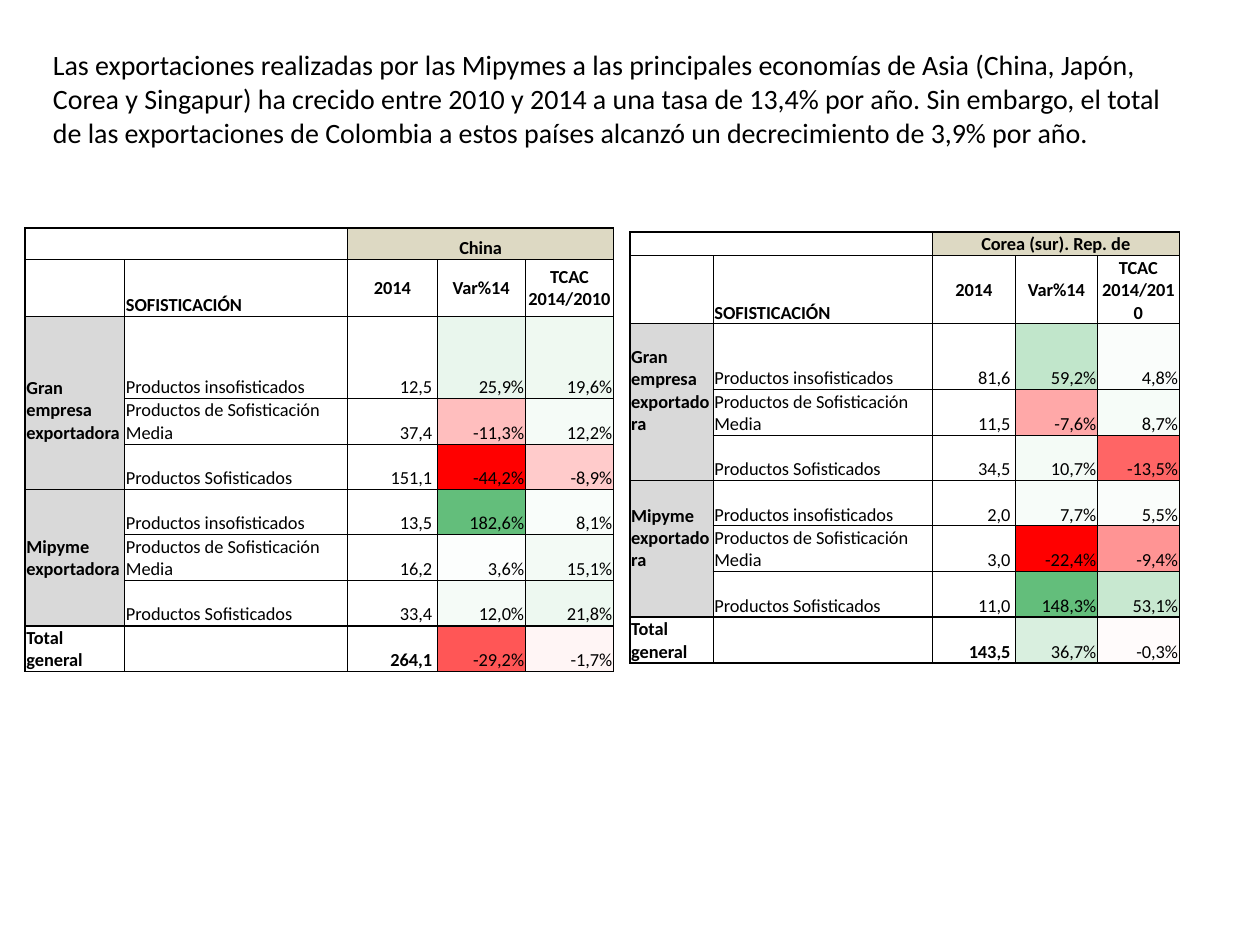
import lxml.etree
import pptx
import pptx.dml.color
import pptx.enum.text
import pptx.oxml.ns
import pptx.util

Inches, Pt = pptx.util.Inches, pptx.util.Pt
ALIGN, ANCHOR = pptx.enum.text.PP_ALIGN, pptx.enum.text.MSO_ANCHOR
qn = pptx.oxml.ns.qn

THEME = {
    "font": "Calibri", "ink": "000000", "title_size": 16, "table_size": 10.5,
    "country_fill": "DDD9C3", "group_fill": "D9D9D9", "thin": 0.5, "thick": 1,
}
CELL_MARGINS = {"margin_left": 0.01, "margin_top": 0.01, "margin_right": 0.01, "margin_bottom": 0}
PRODUCTS = ["Productos insofisticados", "Productos de Sofisticación Media", "Productos Sofisticados"]
HEADINGS = ["", "SOFISTICACIÓN", "2014", "Var%14", "TCAC 2014/2010"]
GROUPS = {2: "Gran empresa exportadora", 5: "Mipyme exportadora"}
TOTAL_ROW = 8

# Each line of values: 2014, Var%14 and its fill, TCAC and its fill
COUNTRIES = [
    {
        "name": "China", "left": 0.2, "top": 1.81,
        "widths": [0.79, 1.77, 0.71, 0.7, 0.7],
        "heights": [0.25, 0.45, 0.65] + [0.36] * 6,
        "values": [
            ("12,5", "25,9%", "E9F6ED", "19,6%", "EFF9F1"),
            ("37,4", "-11,3%", "FFBEBE", "12,2%", "F5FBF7"),
            ("151,1", "-44,2%", "FF0000", "-8,9%", "FFCBCB"),
            ("13,5", "182,6%", "63BE7B", "8,1%", "F9FDFA"),
            ("16,2", "3,6%", "FCFEFD", "15,1%", "F3FAF5"),
            ("33,4", "12,0%", "F5FBF7", "21,8%", "EDF8F0"),
            ("264,1", "-29,2%", "FF5656", "-1,7%", "FFF5F5"),
        ],
    },
    {
        "name": "Corea (sur). Rep. de", "left": 5, "top": 1.84,
        "widths": [0.66, 1.74, 0.66, 0.65, 0.65],
        "heights": [0.19, 0.53, 0.52] + [0.36] * 6,
        "values": [
            ("81,6", "59,2%", "C1E6CB", "4,8%", "FAFDFB"),
            ("11,5", "-7,6%", "FFA8A8", "8,7%", "F6FCF8"),
            ("34,5", "10,7%", "F4FBF6", "-13,5%", "FF6565"),
            ("2,0", "7,7%", "F7FCF9", "5,5%", "FAFDFB"),
            ("3,0", "-22,4%", "FF0000", "-9,4%", "FF9494"),
            ("11,0", "148,3%", "63BE7B", "53,1%", "C8E8D0"),
            ("143,5", "36,7%", "D9EFDF", "-0,3%", "FFFBFB"),
        ],
    },
]


def write(paragraph, text, size, bold=False, align=ALIGN.LEFT):
    paragraph.alignment = align
    if not text:
        lxml.etree.SubElement(paragraph._p, qn("a:endParaRPr"), sz=str(int(size * 100)))
        return
    run = paragraph.add_run()
    run.text = text
    font_format = {"name": THEME["font"], "size": Pt(size), "bold": bold}
    for attribute, value in font_format.items():
        setattr(run.font, attribute, value)
    run.font.color.rgb = pptx.dml.color.RGBColor.from_string(THEME["ink"])


def draw_borders(cell, row, column):
    """Thick lines frame the table, the figures and the total row; the rest are thin."""
    last_row = row + cell.span_height - 1 if cell.is_merge_origin else row
    last_column = column + cell.span_width - 1 if cell.is_merge_origin else column
    thick_sides = {
        "a:lnL": column in (0, 2),
        "a:lnR": last_column in (1, 4),
        "a:lnT": row in (0, TOTAL_ROW),
        "a:lnB": last_row in (TOTAL_ROW - 1, TOTAL_ROW),
    }
    properties = cell._tc.get_or_add_tcPr()
    for side, is_thick in thick_sides.items():
        width = Pt(THEME["thick"] if is_thick else THEME["thin"])
        line = lxml.etree.SubElement(properties, qn(side), w=str(width))
        line_fill = lxml.etree.SubElement(line, qn("a:solidFill"))
        lxml.etree.SubElement(line_fill, qn("a:srgbClr"), val=THEME["ink"])


presentation = pptx.Presentation()
presentation.slide_width, presentation.slide_height = Inches(10), Inches(7.5)
slide = presentation.slides.add_slide(presentation.slide_layouts[5])

headline = slide.shapes.title
headline_box = {"left": 0.32, "top": 0.33, "width": 9.04, "height": 0.91}
for attribute, value in headline_box.items():
    setattr(headline, attribute, Inches(value))
headline_format = {
    "word_wrap": True,
    "auto_size": pptx.enum.text.MSO_AUTO_SIZE.NONE,
    "vertical_anchor": ANCHOR.TOP,
}
for attribute, value in headline_format.items():
    setattr(headline.text_frame, attribute, value)
write(
    headline.text_frame.paragraphs[0],
    "Las exportaciones realizadas por las Mipymes a las principales economías de Asia "
    "(China, Japón, Corea y Singapur) ha crecido entre 2010 y 2014 a una tasa de 13,4% por año. "
    "Sin embargo, el total de las exportaciones de Colombia a estos países alcanzó un "
    "decrecimiento de 3,9% por año.",
    THEME["title_size"],
)

for country in COUNTRIES:
    widths, heights = country["widths"], country["heights"]
    exports = slide.shapes.add_table(
        len(heights), len(widths), Inches(country["left"]), Inches(country["top"]),
        Inches(sum(widths)), Inches(sum(heights)),
    ).table
    exports.first_row = exports.horz_banding = False
    for column, width in enumerate(widths):
        exports.columns[column].width = Inches(width)
    for row, height in enumerate(heights):
        exports.rows[row].height = Inches(height)

    exports.cell(0, 0).merge(exports.cell(0, 1))
    exports.cell(0, 2).merge(exports.cell(0, 4))
    for row in GROUPS:
        exports.cell(row, 0).merge(exports.cell(row + 2, 0))

    texts = [["", "", country["name"], "", ""], HEADINGS]
    fills = {(0, 2): THEME["country_fill"]}
    for row, (sales, change, change_fill, growth, growth_fill) in enumerate(country["values"], 2):
        is_total = row == TOTAL_ROW
        group = "Total general" if is_total else GROUPS.get(row, "")
        product = "" if is_total else PRODUCTS[(row - 2) % 3]
        texts.append([group, product, sales, change, growth])
        fills[row, 3], fills[row, 4] = change_fill, growth_fill
        if row in GROUPS:
            fills[row, 0] = THEME["group_fill"]

    for row, row_texts in enumerate(texts):
        for column, text in enumerate(row_texts):
            cell = exports.cell(row, column)
            margins = dict(CELL_MARGINS)
            if row in GROUPS and column == 0:
                margins["margin_bottom"] = 0.36
            if row > 1 and column == 2:
                margins["margin_right"] = 0.04
            for attribute, value in margins.items():
                setattr(cell, attribute, Inches(value))
            cell.vertical_anchor = ANCHOR.MIDDLE if row == 1 and column > 1 else ANCHOR.BOTTOM
            draw_borders(cell, row, column)
            if (row, column) in fills:
                cell.fill.solid()
                cell.fill.fore_color.rgb = pptx.dml.color.RGBColor.from_string(fills[row, column])
            else:
                cell.fill.background()
            align = ALIGN.LEFT if column < 2 else ALIGN.CENTER if row < 2 else ALIGN.RIGHT
            bold = row < 2 or column == 0 or (row == TOTAL_ROW and column == 2)
            write(cell.text_frame.paragraphs[0], text, THEME["table_size"], bold, align)

presentation.save("out.pptx")
